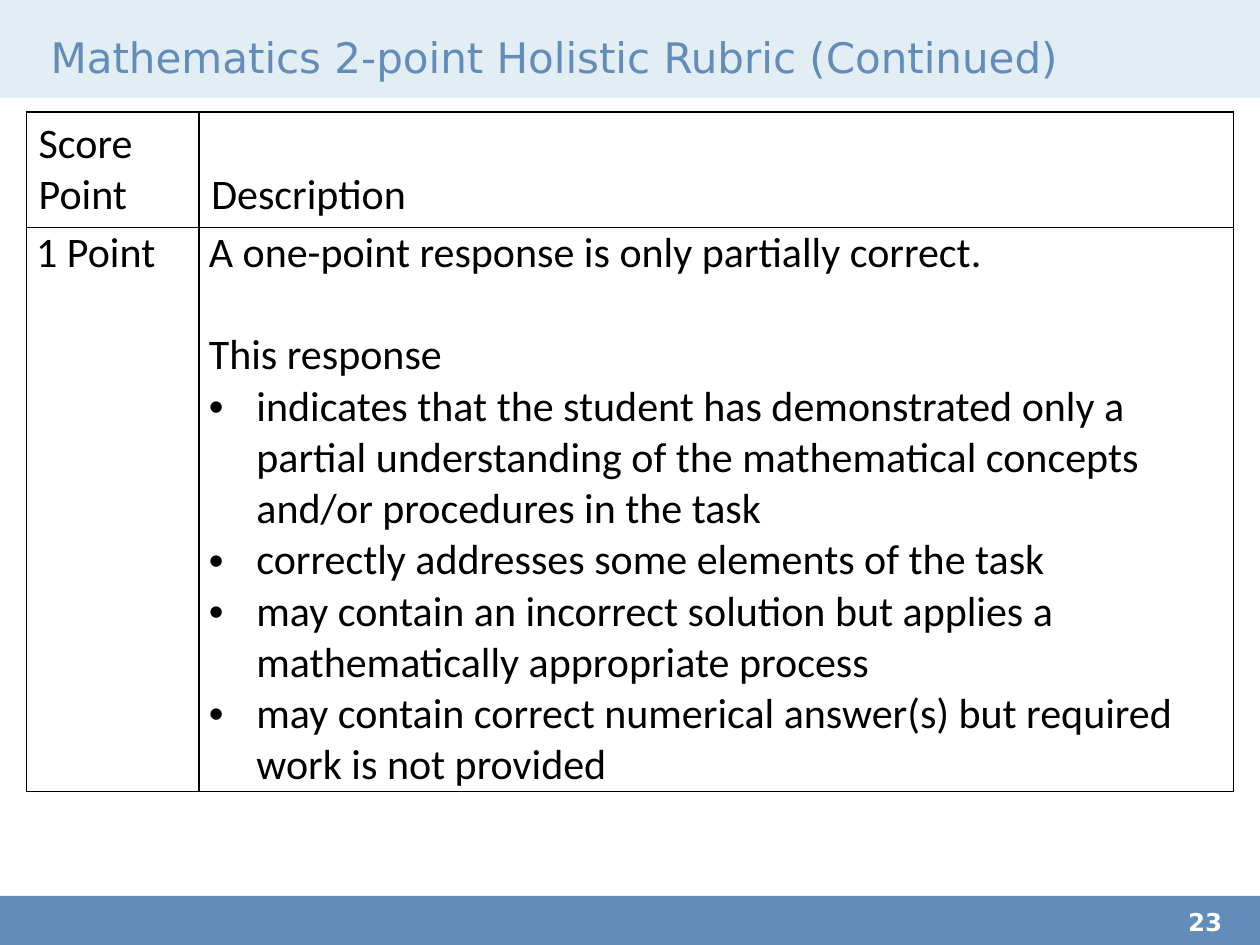
"""Build the one-point page of the mathematics holistic rubric."""
from lxml import etree
from pptx import Presentation
from pptx import util as u
from pptx.dml.color import RGBColor
from pptx.enum import shapes, text
from pptx.oxml.ns import qn


def colour(value):
    return RGBColor.from_string(value)


def write(paragraph, words, font="Calibri", size=24, ink="000000", bold=False, bullet=False, before=0):
    paragraph.alignment = text.PP_ALIGN.LEFT
    paragraph.space_before = u.Pt(before)
    if bullet:
        props = paragraph._p.get_or_add_pPr()
        props.set("marL", str(u.Cm(0.96)))
        props.set("indent", str(u.Cm(-0.96)))
        etree.SubElement(props, qn("a:buFont"), typeface="Arial")
        etree.SubElement(props, qn("a:buChar"), char="•")
        tabs = etree.SubElement(props, qn("a:tabLst"))
        etree.SubElement(tabs, qn("a:tab"), pos=str(u.Cm(1.27)), algn="l")
    paragraph.text = words
    paragraph.font.name = font
    paragraph.font.size = u.Pt(size)
    paragraph.font.bold = bold
    paragraph.font.color.rgb = colour(ink)


deck = Presentation()
deck.slide_width, deck.slide_height = u.Cm(25.4), u.Cm(19.05)
slide = deck.slides.add_slide(deck.slide_layouts[5])

for top, height, fill in [(18.06, 0.99, "628DBB"), (0, 3.33, "E3EDF4"), (1.98, 2.18, "FFFFFF")]:
    band = slide.shapes.add_shape(shapes.MSO_SHAPE.RECTANGLE, 0, u.Cm(top), deck.slide_width, u.Cm(height))
    band.shadow.inherit = False
    band.fill.solid()
    band.fill.fore_color.rgb = colour(fill)
    band.line.fill.background()

heading = slide.shapes.title
slide.shapes.element.append(heading.element)
heading.left, heading.top, heading.width, heading.height = u.Cm(1.02), u.Cm(0.58), u.Cm(22.86), u.Cm(1.24)
frame = heading.text_frame
frame.margin_left = frame.margin_top = 0
frame.margin_right, frame.margin_bottom = u.Cm(0.25), u.Cm(0.13)
frame.vertical_anchor = text.MSO_ANCHOR.MIDDLE
frame.auto_size = text.MSO_AUTO_SIZE.NONE
write(frame.paragraphs[0], "Mathematics 2-point Holistic Rubric (Continued)", font="DejaVu Sans", ink="628DBB")

criteria = [
    "indicates that the student has demonstrated only a partial understanding of the "
    "mathematical concepts and/or procedures in the task",
    "correctly addresses some elements of the task",
    "may contain an incorrect solution but applies a mathematically appropriate process",
    "may contain correct numerical answer(s) but required work is not provided",
]
description = [
    ("A one-point response is only partially correct.", {}),
    ("This response", {"before": 29.3}),
] + [(criterion, {"bullet": True}) for criterion in criteria]
rows = [
    [[("Score Point", {})], [("Description", {})]],
    [[("1 Point", {})], description],
]

rubric = slide.shapes.add_table(2, 2, u.Cm(0.53), u.Cm(2.26), u.Cm(24.34), u.Cm(13.67)).table
rubric.first_row = rubric.horz_banding = False
for column, width in zip(rubric.columns, (3.48, 20.86)):
    column.width = u.Cm(width)
for row, height in zip(rubric.rows, (2.31, 11.36)):
    row.height = u.Cm(height)

for r, row in enumerate(rows):
    side, edge = [(0.25, 0.13), (0.2, 0)][r]
    for c, entries in enumerate(row):
        cell = rubric.cell(r, c)
        cell.margin_left = cell.margin_right = u.Cm(side)
        cell.margin_top = cell.margin_bottom = u.Cm(edge)
        cell.vertical_anchor = [text.MSO_ANCHOR.BOTTOM, text.MSO_ANCHOR.TOP][r]
        cell.fill.solid()
        cell.fill.fore_color.rgb = colour("FFFFFF")
        for i, tag in enumerate(("a:lnL", "a:lnR", "a:lnT", "a:lnB")):
            border = etree.Element(qn(tag), w=str(u.Pt(1)))
            ink = etree.SubElement(border, qn("a:solidFill"))
            etree.SubElement(ink, qn("a:srgbClr"), val="000000")
            cell._tc.tcPr.insert(i, border)
        for i, (words, style) in enumerate(entries):
            body = cell.text_frame
            write(body.add_paragraph() if i else body.paragraphs[0], words, **style)

page = slide.shapes.add_textbox(u.Cm(23.95), u.Cm(18.29), u.Cm(1.45), u.Cm(0.76)).text_frame
page.word_wrap = True
page.margin_left = page.margin_top = page.margin_right = page.margin_bottom = 0
write(page.paragraphs[0], "23", font="DejaVu Sans", size=14, ink="FFFFFF", bold=True)

deck.save("out.pptx")
